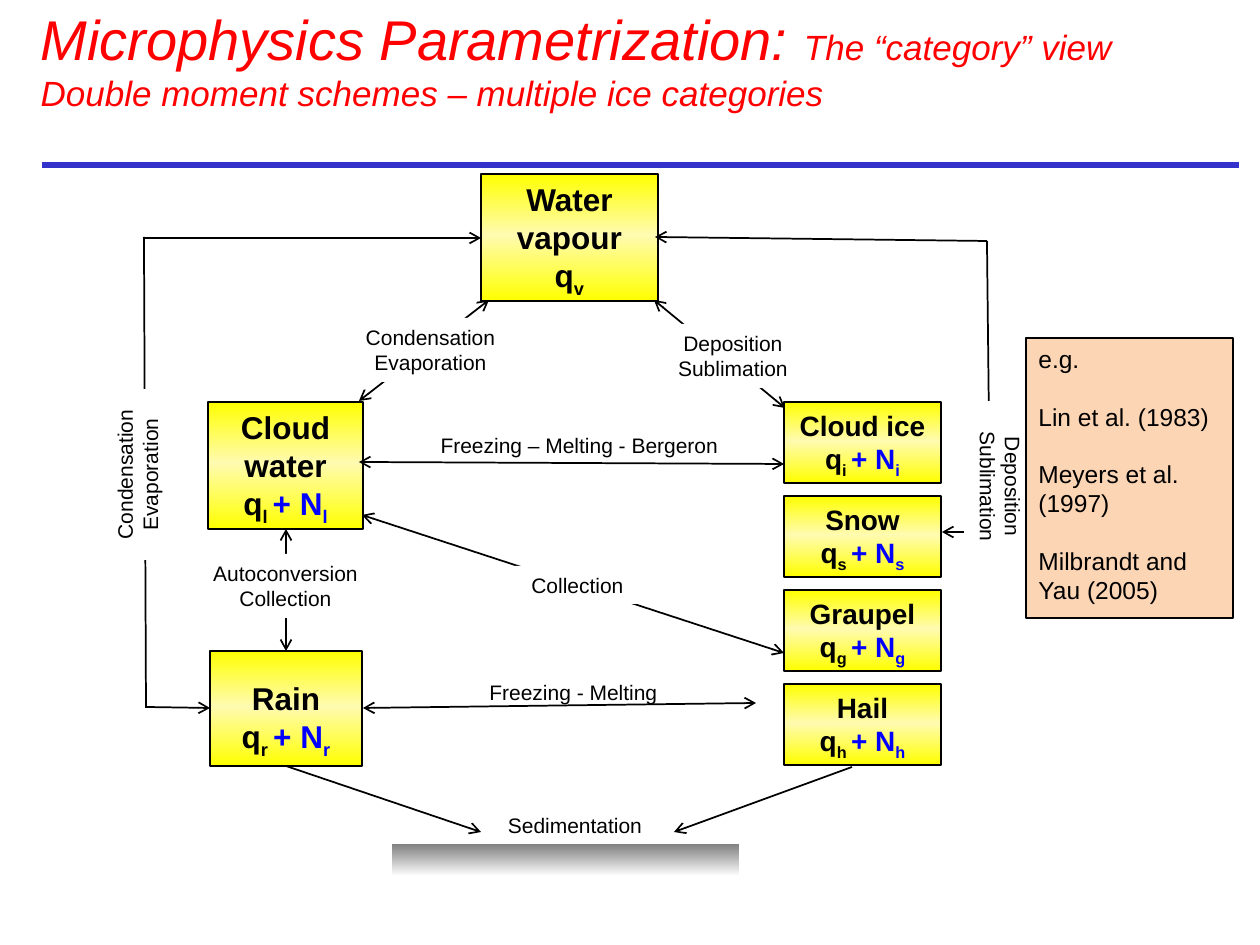
from dataclasses import dataclass
from lxml.etree import SubElement as Sub
from pptx import Presentation
from pptx.dml.color import RGBColor as RGB
from pptx.enum.shapes import MSO_CONNECTOR as Link, MSO_SHAPE as Shape
from pptx.enum.text import MSO_ANCHOR as Anchor, MSO_AUTO_SIZE as Fit, PP_ALIGN as Align
from pptx.oxml.ns import qn
from pptx.util import Pt

PX = 914400 / 126


@dataclass(frozen=True)
class Theme:
    face: str = "Arial"
    ink: str = "000000"
    red: str = "FF0000"
    num: str = "0000FF"
    rule: str = "3333CC"
    paper: str = "FFFFFF"
    peach: str = "FCD5B5"
    glow: tuple = ((0, "FFFF00"), (48, "FFFBB0"), (100, "FFFF00"))
    ground: tuple = ((0, "808080"), (49, "FFFFFF"))
    head: int = 32
    sub: int = 20
    big: int = 18
    mid: int = 16
    note: int = 14
    small: int = 12


def emu(*vals):
    return [round(v * PX) for v in vals]


def put(item, vals):
    for key, val in vals.items():
        setattr(item, key, val)


class Page:
    """Holds the theme and the slide being drawn."""

    def __init__(self, deck, theme):
        self.theme = theme
        self.slide = deck.slides.add_slide(deck.slide_layouts[5])

    def run(self, para, text, size, color=None, low=False, **style):
        run = para.add_run()
        run.text = text
        put(run.font, {"name": self.theme.face, "size": Pt(size), **style})
        run.font.color.rgb = RGB.from_string(color or self.theme.ink)
        if low:
            run._r.get_or_add_rPr().set("baseline", "-25000")

    def title(self, box, parts):
        shape = self.slide.shapes.title
        put(shape, dict(zip(("left", "top", "width", "height"), emu(*box))))
        put(shape.text_frame, {"word_wrap": True, "auto_size": Fit.NONE,
                               "vertical_anchor": Anchor.MIDDLE})
        para = shape.text_frame.paragraphs[0]
        para.alignment = Align.LEFT
        for text, size in parts:
            self.run(para, text, size, self.theme.red, italic=True)

    def rect(self, box, fill=None, edge=0, anchor=Anchor.TOP):
        shape = self.slide.shapes.add_shape(Shape.RECTANGLE, *emu(*box))
        shape.shadow.inherit = False
        if isinstance(fill, tuple):
            shape.fill.gradient()
            shape.fill.gradient_angle = 270
            stops = shape._element.spPr.find(".//" + qn("a:gsLst"))
            stops.clear()
            for pos, color in fill:
                stop = Sub(stops, qn("a:gs"), pos=str(pos * 1000))
                Sub(stop, qn("a:srgbClr"), val=color)
        elif fill:
            shape.fill.solid()
            shape.fill.fore_color.rgb = RGB.from_string(fill)
        else:
            shape.fill.background()
        if edge:
            shape.line.color.rgb = RGB.from_string(self.theme.ink)
            shape.line.width = Pt(edge)
        else:
            shape.line.fill.background()
        put(shape.text_frame, {"word_wrap": True, "vertical_anchor": anchor})
        return shape

    def state(self, box, name, sign, size, num=True, anchor=Anchor.TOP):
        frame = self.rect(box, self.theme.glow, 1, anchor).text_frame
        top, base = frame.paragraphs[0], frame.add_paragraph()
        self.run(top, name, size, bold=True)
        self.run(base, "q", size, bold=True)
        self.run(base, sign + " " if num else sign, size, low=True, bold=True)
        if num:
            self.run(base, "+ N", size, self.theme.num, bold=True)
            self.run(base, sign, size, self.theme.num, True, bold=True)
        for para in (top, base):
            para.alignment = Align.CENTER

    def label(self, box, text, fill=None, turn=None):
        frame = self.rect(box, fill).text_frame
        put(frame, dict.fromkeys(("margin_left", "margin_right"), emu(6)[0]))
        if turn:
            frame._txBody.bodyPr.set("vert", turn)
        frame.paragraphs[0].alignment = Align.CENTER
        self.run(frame.paragraphs[0], text, self.theme.small)

    def note(self, box, items):
        frame = self.rect(box, self.theme.peach, 0.75).text_frame
        for i, text in enumerate(items):
            para = frame.add_paragraph() if i else frame.paragraphs[0]
            put(para, {"alignment": Align.LEFT, "space_before": Pt(16 if i else 0)})
            self.run(para, text, self.theme.note)

    def line(self, ends, tips=(), color=None, width=1):
        link = self.slide.shapes.add_connector(Link.STRAIGHT, *emu(*ends))
        link.line.color.rgb = RGB.from_string(color or self.theme.ink)
        link.line.width = Pt(width)
        prop = link._element.spPr
        for tip in tips:
            Sub(prop.get_or_add_ln(), qn(f"a:{tip}End"), type="arrow")
        Sub(prop, qn("a:effectLst"))


def main():
    deck = Presentation()
    put(deck, dict(zip(("slide_width", "slide_height"), emu(1260, 945))))
    look = Theme()
    page = Page(deck, look)
    page.line((42, 165, 1239, 165), color=look.rule, width=3)
    page.title((28, 20, 1108, 78), [
        ("Microphysics Parametrization: ", look.head),
        ("The “category” view Double moment schemes – multiple ice categories", look.sub)])

    page.state((481, 174, 177, 127), "Water vapour", "v", look.big, num=False)
    page.state((208, 402, 155, 127), "Cloud water", "l", look.big)
    page.state((210, 651, 152, 115), "Rain", "r", look.big, anchor=Anchor.BOTTOM)
    for i, name in enumerate(("Cloud ice", "Snow", "Graupel", "Hail")):
        page.state((784, 402 + 94 * i, 157, 81), name, name.split()[-1][0].lower(), look.mid)

    flows = {
        ("head", "tail"): [
            (359, 401, 489, 300), (654, 300, 785, 408), (286, 529, 286, 651),
            (363, 708, 756, 703), (359, 462, 784, 464), (362, 515, 784, 653)],
        ("head",): [(481, 238, 144, 238), (655, 237, 987, 241)],
        ("tail",): [(146, 707, 210, 708), (286, 766, 481, 832), (852, 767, 674, 832)],
        (): [(144, 237, 146, 708), (987, 241, 990, 515)],
    }
    for tips, lines in flows.items():
        for ends in lines:
            page.line(ends, tips)

    page.rect((392, 844, 347, 66), look.ground)
    page.label((397, 673, 353, 38), "Freezing - Melting")
    page.label((403, 426, 353, 38), "Freezing – Melting - Bergeron")
    for box, text, turn in (
            ((174, 554, 223, 64), "Autoconversion Collection", None),
            ((665, 324, 136, 64), "Deposition Sublimation", None),
            ((319, 318, 223, 64), "Condensation Evaporation", None),
            ((515, 566, 125, 38), "Collection", None),
            ((495, 806, 160, 38), "Sedimentation", None),
            ((106, 389, 77, 171), "Condensation Evaporation", "vert270"),
            ((955, 401, 77, 171), "Deposition Sublimation", "vert")):
        page.label(box, text, look.paper, turn)
    page.line((964, 532, 942, 532), ("tail",))
    page.note((1026, 338, 207, 280), (
        "e.g.", "Lin et al. (1983)", "Meyers et al. (1997)", "Milbrandt and Yau (2005)"))
    deck.save("out.pptx")


if __name__ == "__main__":
    main()
